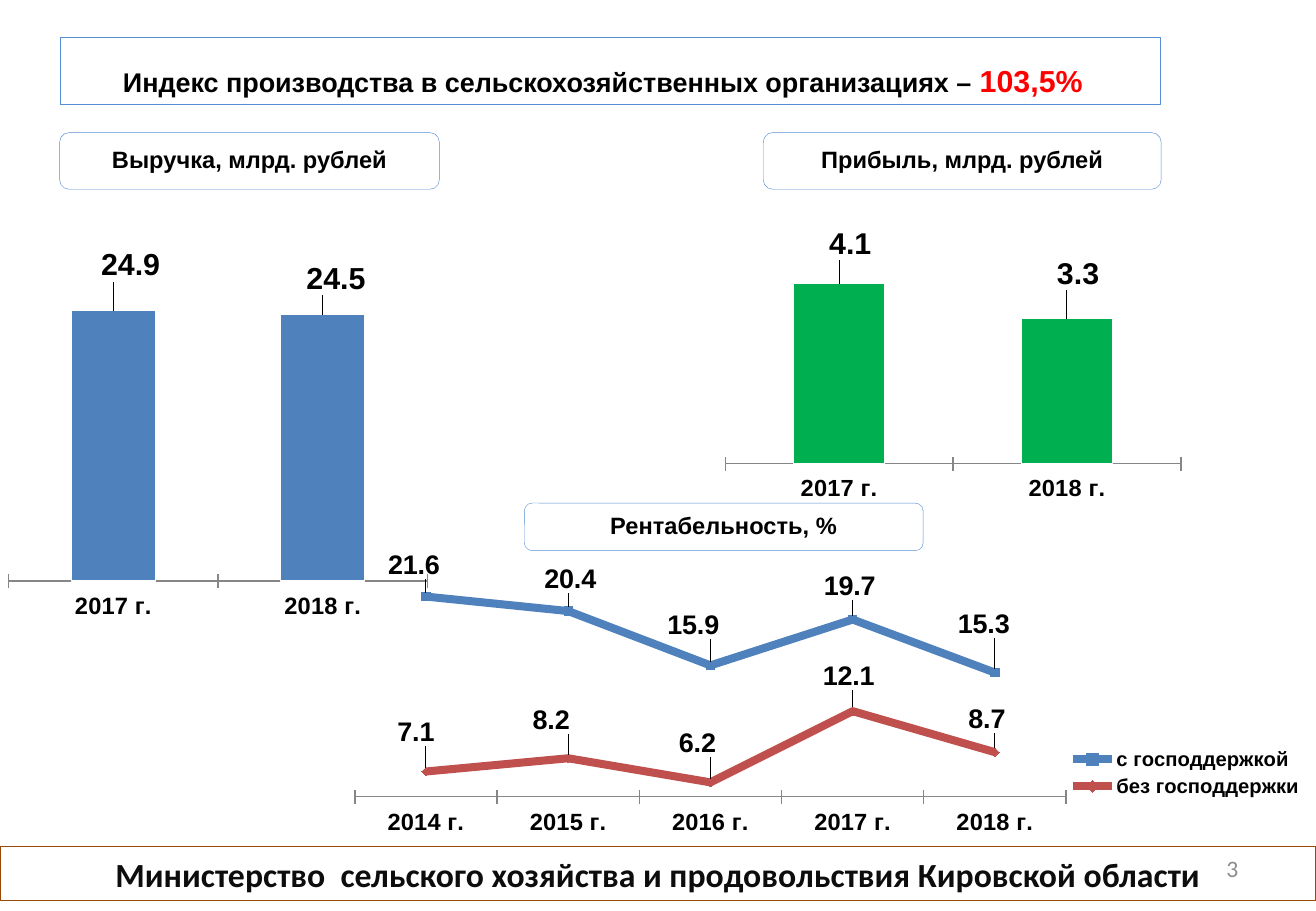
from dataclasses import dataclass

from lxml import etree
from pptx import Presentation
from pptx.chart import data as chart_data
from pptx.dml import color
from pptx.enum import chart as chart_enum
from pptx.enum import shapes, text
from pptx.oxml import ns
from pptx.util import Pt

PX = 7620


@dataclass(frozen=True)
class Theme:
    heading_font: str = "Arial"
    footer_font: str = "Calibri"
    black: str = "000000"
    white: str = "FFFFFF"
    accent: str = "FF0000"
    border: str = "558ED5"
    footer_line: str = "984807"
    footer_text: str = "0D0D0D"
    muted: str = "8C8C8C"
    axis: str = "868686"
    blue: str = "4F81BD"
    green: str = "00B050"
    red: str = "C0504D"
    footer_size: int = 20
    large: int = 18
    medium: int = 16
    normal: int = 14
    legend: int = 12


THEME = Theme()


def rgb(value):
    return color.RGBColor.from_string(value)


def place(*lengths):
    return [length * PX for length in lengths]


def style(font, size, shade=THEME.black, name=THEME.heading_font, bold=True):
    font.size = Pt(size)
    font.name = name
    font.bold = bold
    font.color.rgb = rgb(shade)


def outline(box, shade, width):
    box.line.color.rgb = rgb(shade)
    box.line.width = Pt(width)


def add_heading(page, wording, value):
    box = page.shapes.title
    box.left, box.top, box.width, box.height = place(59, 37, 1087, 66)
    geometry = etree.Element(ns.qn("a:prstGeom"), prst="roundRect")
    etree.SubElement(geometry, ns.qn("a:avLst"))
    box.element.spPr.insert(1, geometry)
    box.fill.solid()
    box.fill.fore_color.rgb = rgb(THEME.white)
    outline(box, THEME.border, 0.25)
    frame = box.text_frame
    frame.auto_size = text.MSO_AUTO_SIZE.NONE
    frame.vertical_anchor = text.MSO_ANCHOR.MIDDLE
    frame.margin_right = 26 * PX
    para = frame.paragraphs[0]
    para.alignment = text.PP_ALIGN.CENTER
    para.line_spacing = 1.5
    for words, size, shade in ((wording, THEME.medium, THEME.black),
                               (value, THEME.large, THEME.accent)):
        span = para.add_run()
        span.text = words
        style(span.font, size, shade)


def add_caption(page, wording, *position):
    box = page.shapes.add_shape(shapes.MSO_SHAPE.ROUNDED_RECTANGLE, *place(*position))
    box.shadow.inherit = False
    box.fill.solid()
    box.fill.fore_color.rgb = rgb(THEME.white)
    outline(box, THEME.border, 0.25)
    box.text_frame.text = wording
    box.text_frame.vertical_anchor = text.MSO_ANCHOR.MIDDLE
    para = box.text_frame.paragraphs[0]
    para.alignment = text.PP_ALIGN.CENTER
    para.line_spacing = 0.9
    style(para.runs[0].font, THEME.normal)


def add_page_number(page, number):
    box = page.shapes.add_textbox(*place(931, 834, 304, 48))
    frame = box.text_frame
    frame.word_wrap = True
    frame.text = number
    frame.vertical_anchor = text.MSO_ANCHOR.MIDDLE
    para = frame.paragraphs[0]
    para.alignment = text.PP_ALIGN.RIGHT
    style(para.runs[0].font, THEME.normal, THEME.muted, THEME.footer_font, False)


def add_footer(page, wording):
    box = page.shapes.add_shape(shapes.MSO_SHAPE.RECTANGLE, *place(0, 836, 1300, 54))
    box.shadow.inherit = False
    box.fill.background()
    outline(box, THEME.footer_line, 0.75)
    box.text_frame.text = wording
    para = box.text_frame.paragraphs[0]
    para.alignment = text.PP_ALIGN.CENTER
    style(para.runs[0].font, THEME.footer_size, THEME.footer_text, THEME.footer_font)


def set_layout(parent, index, **settings):
    for existing in parent.findall(ns.qn("c:layout")):
        parent.remove(existing)
    layout = etree.Element(ns.qn("c:layout"))
    manual = etree.SubElement(layout, ns.qn("c:manualLayout"))
    for tag, value in settings.items():
        etree.SubElement(manual, ns.qn(f"c:{tag}"), val=str(value))
    parent.insert(index, layout)


def add_chart(page, kind, position, years, rows, plot_area, low, high):
    values = chart_data.CategoryChartData(number_format="General")
    values.categories = years
    for name, numbers in rows:
        values.add_series(name, numbers)
    chart = page.shapes.add_chart(kind, *place(*position), values).chart
    chart.has_title = False
    chart.has_legend = False
    style(chart.font, THEME.large, name=THEME.footer_font, bold=False)
    scale = chart.value_axis
    scale.visible = False
    scale.has_major_gridlines = False
    scale.minimum_scale, scale.maximum_scale = low, high
    axis = chart.category_axis
    axis.major_tick_mark = chart_enum.XL_TICK_MARK.CROSS
    axis.format.line.color.rgb = rgb(THEME.axis)
    style(axis.tick_labels.font, THEME.normal)
    left, top, width, height = plot_area
    set_layout(chart.element.find(".//" + ns.qn("c:plotArea")), 0,
               layoutTarget="inner", xMode="edge", yMode="edge",
               x=left, y=top, w=width, h=height)
    return chart


def label_points(series, size, side, offsets, position):
    for index, (across, down) in enumerate(offsets):
        label = series.points[index].data_label
        style(label.font, size)
        label.position = side
    labels = series.data_labels
    labels.show_value = True
    style(labels.font, size)
    for item, (across, down) in zip(series.data_labels._element.findall(ns.qn("c:dLbl")), offsets):
        set_layout(item, 1, x=round(across / position[2], 4), y=round(down / position[3], 4))


def add_columns(page, name, numbers, shade, position, plot_area, high, offsets):
    chart = add_chart(page, chart_enum.XL_CHART_TYPE.COLUMN_CLUSTERED, position,
                      ("2017 г.", "2018 г."), [(name, numbers)], plot_area, 0, high)
    plot = chart.plots[0]
    plot.gap_width = 150
    plot.vary_by_categories = False
    series = plot.series[0]
    series.format.fill.solid()
    series.format.fill.fore_color.rgb = rgb(shade)
    outline(series.format, THEME.white, 0.75)
    label_points(series, THEME.large, chart_enum.XL_LABEL_POSITION.OUTSIDE_END, offsets, position)


def add_profitability(page):
    position = (350, 544, 950, 300)
    years = [f"{year} г." for year in range(2014, 2019)]
    rows = [("с господдержкой", (21.6, 20.4, 15.9, 19.7, 15.3)),
            ("без господдержки", (7.1, 8.2, 6.2, 12.1, 8.7))]
    chart = add_chart(page, chart_enum.XL_CHART_TYPE.LINE_MARKERS, position, years, rows,
                      (0, 0.09, 0.74, 0.72), 5, 23)
    looks = (
        (THEME.blue, chart_enum.XL_MARKER_STYLE.SQUARE,
         ((-12, -8), (2, -9), (-17, -17), (-3, -10), (-11, -25))),
        (THEME.red, chart_enum.XL_MARKER_STYLE.DIAMOND,
         ((-10, -16), (-17, -15), (-13, -16), (-4, -12), (-8, -10))),
    )
    for series, (shade, marker, offsets) in zip(chart.plots[0].series, looks):
        series.smooth = False
        outline(series.format, shade, 4.75)
        series.marker.style = marker
        series.marker.size = 5
        series.marker.format.fill.solid()
        series.marker.format.fill.fore_color.rgb = rgb(shade)
        series.marker.format.line.color.rgb = rgb(shade)
        label_points(series, THEME.medium, chart_enum.XL_LABEL_POSITION.ABOVE, offsets, position)
    chart.has_legend = True
    chart.legend.position = chart_enum.XL_LEGEND_POSITION.RIGHT
    chart.legend.include_in_layout = False
    style(chart.legend.font, THEME.legend)
    set_layout(chart.legend._element, 1, xMode="edge", yMode="edge",
               x=0.74, y=0.63, w=0.25, h=0.2)


def main():
    deck = Presentation()
    deck.slide_width, deck.slide_height = place(1300, 900)
    page = deck.slides.add_slide(deck.slide_layouts[5])
    add_heading(page, "Индекс производства в сельскохозяйственных организациях – ", "103,5%")
    add_page_number(page, "3")
    add_footer(page, "Министерство  сельского хозяйства и продовольствия Кировской области")
    add_caption(page, "Прибыль, млрд. рублей", 754, 131, 393, 56)
    add_caption(page, "Выручка, млрд. рублей", 59, 131, 375, 56)
    add_columns(page, "Выручка", (24.9, 24.5), THEME.blue, (0, 244, 431, 375),
                (0.02, 0.02, 0.96, 0.86), 30, ((17, -23), (13, -14)))
    add_columns(page, "Прибыль", (4.1, 3.3), THEME.green, (707, 224, 469, 272),
                (0.02, 0.13, 0.96, 0.73), 4.5, ((11, -18), (11, -23)))
    add_caption(page, "Рентабельность, %", 518, 497, 394, 47)
    add_profitability(page)
    deck.save("out.pptx")


if __name__ == "__main__":
    main()
